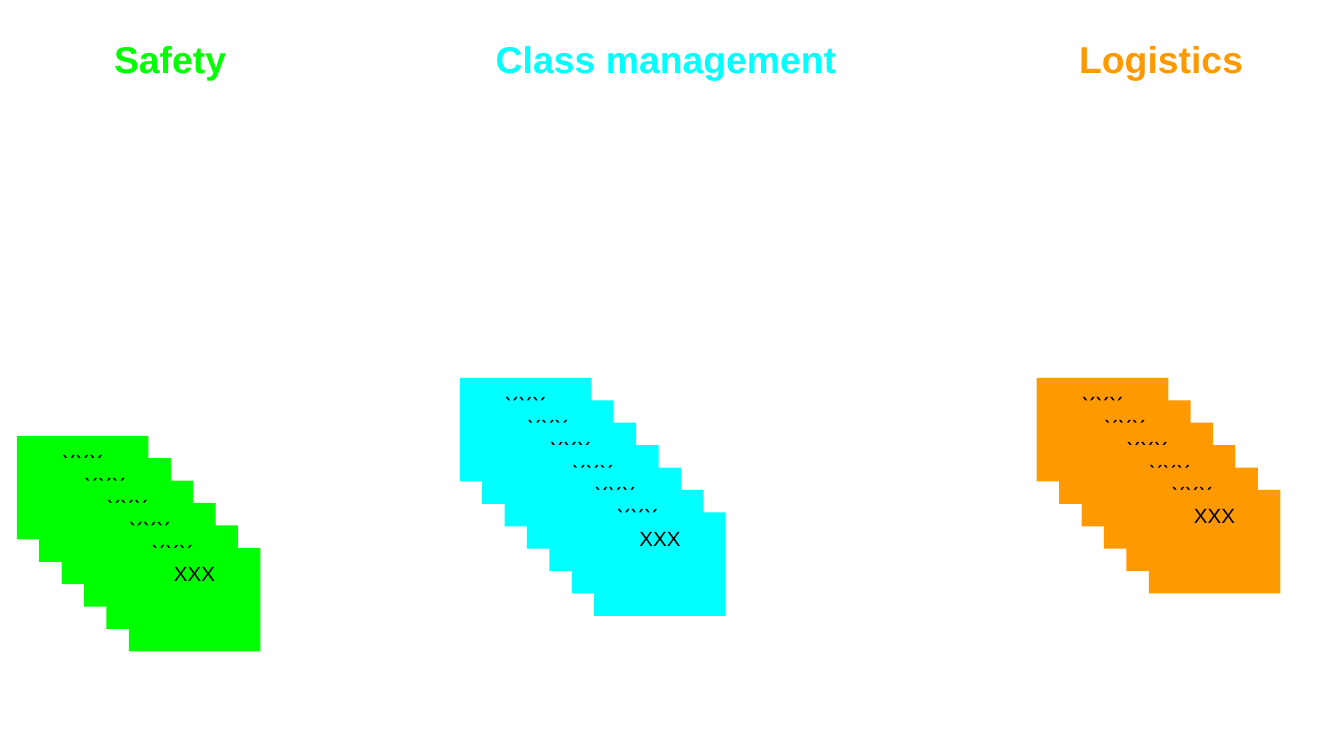
from pptx import Presentation
from pptx.dml.color import RGBColor
from pptx.enum.shapes import MSO_SHAPE
from pptx.enum.text import MSO_ANCHOR, PP_ALIGN
from pptx.util import Pt

# Content: heading, its left and width, colour, first card's left and top, card labels
TOPICS = [
    ("Safety", 54, 80.6, "green", 9, 233.5, ["XXX"] * 6),
    ("Class management", 258.5, 202.3, "cyan", 246.3, 202.5, ["XXX"] * 7),
    ("Logistics", 571, 110.2, "orange", 555.4, 202.5, ["XXX"] * 6),
]

THEME = {
    "font": "Arial",
    "heading size": 20,
    "card size": 11,
    "green": RGBColor(0x00, 0xFF, 0x00),
    "cyan": RGBColor(0x00, 0xFF, 0xFF),
    "orange": RGBColor(0xFF, 0x99, 0x00),
    "black": RGBColor(0x00, 0x00, 0x00),
}

HEADING_TOP, HEADING_HEIGHT = 12.2, 40.3
CARD_WIDTH, CARD_HEIGHT = 70.5, 55.5
CARD_STEP = 12
INSET = 7.2


def write(box, text, size, color, align, bold=False):
    frame = box.text_frame
    frame.word_wrap = True
    frame.vertical_anchor = MSO_ANCHOR.TOP
    frame.margin_left = frame.margin_right = Pt(INSET)
    frame.margin_top = frame.margin_bottom = Pt(INSET)
    para = frame.paragraphs[0]
    para.text = text
    para.alignment = align
    para.font.name = THEME["font"]
    para.font.size = Pt(size)
    para.font.bold = bold
    para.font.color.rgb = color


def add_heading(page, text, left, width, color):
    box = page.shapes.add_textbox(Pt(left), Pt(HEADING_TOP), Pt(width), Pt(HEADING_HEIGHT))
    write(box, text, THEME["heading size"], color, PP_ALIGN.LEFT, bold=True)


def add_card(page, text, left, top, color):
    card = page.shapes.add_shape(
        MSO_SHAPE.RECTANGLE, Pt(left), Pt(top), Pt(CARD_WIDTH), Pt(CARD_HEIGHT))
    card.shadow.inherit = False
    card.fill.solid()
    card.fill.fore_color.rgb = color
    card.line.fill.background()
    write(card, text, THEME["card size"], THEME["black"], PP_ALIGN.CENTER)


def main():
    deck = Presentation()
    deck.slide_width, deck.slide_height = Pt(720), Pt(405)
    page = deck.slides.add_slide(deck.slide_layouts[6])

    for heading, heading_left, heading_width, color_name, left, top, labels in TOPICS:
        color = THEME[color_name]
        add_heading(page, heading, heading_left, heading_width, color)
        # Stack of cards, each one step right and down from the last
        for index, label in enumerate(labels):
            offset = index * CARD_STEP
            add_card(page, label, left + offset, top + offset, color)

    deck.save("out.pptx")


if __name__ == "__main__":
    main()
